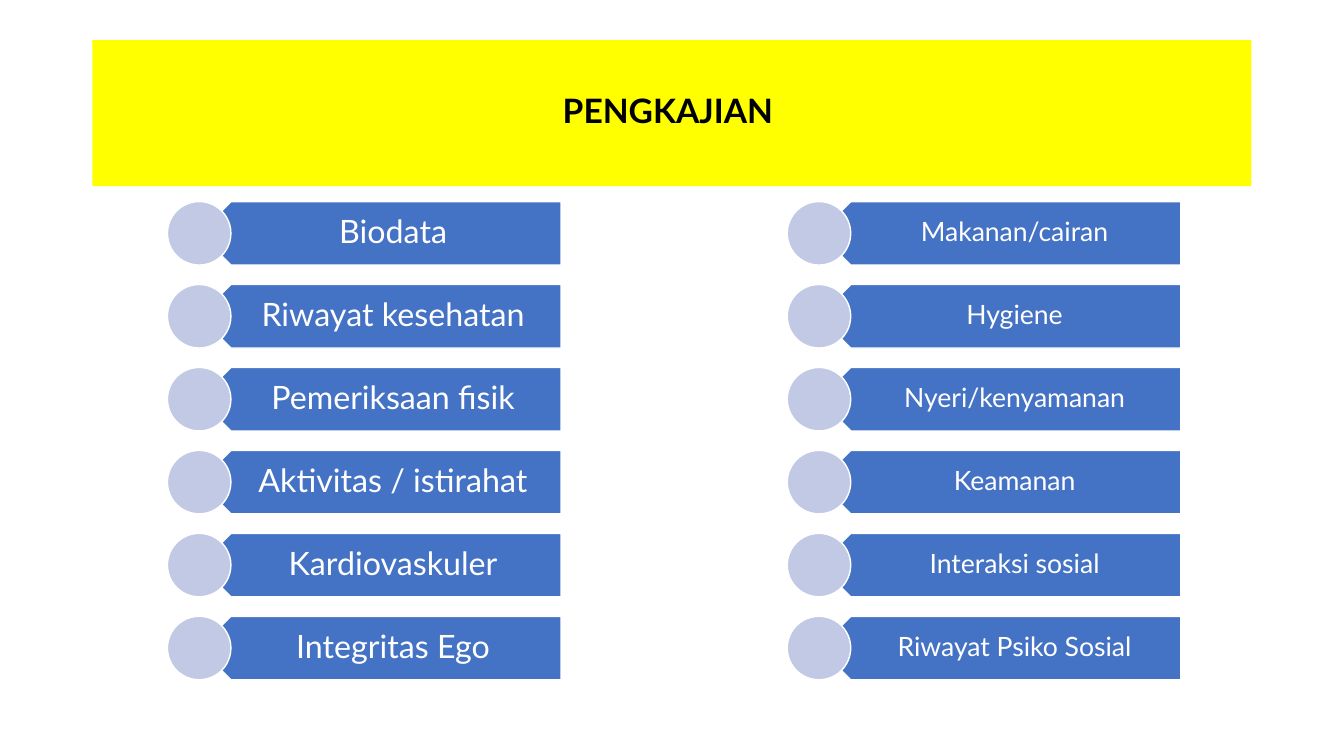
from dataclasses import dataclass

from pptx import Presentation
from pptx.dml.color import RGBColor
from pptx.enum.shapes import MSO_SHAPE
from pptx.enum.text import MSO_ANCHOR, PP_ALIGN
from pptx.util import Cm, Pt

RECTANGLE = MSO_SHAPE.RECTANGLE
PENTAGON = MSO_SHAPE.PENTAGON
OVAL = MSO_SHAPE.OVAL
MIDDLE = MSO_ANCHOR.MIDDLE
CENTER = PP_ALIGN.CENTER


@dataclass(frozen=True)
class Theme:
    font: str = "Lato"
    banner: RGBColor = RGBColor(0xFF, 0xFF, 0x00)
    bar: RGBColor = RGBColor(0x44, 0x72, 0xC4)
    circle: RGBColor = RGBColor(0xC1, 0xC9, 0xE4)
    white: RGBColor = RGBColor(0xFF, 0xFF, 0xFF)
    black: RGBColor = RGBColor(0x00, 0x00, 0x00)
    title_size: int = 24
    left_size: int = 23
    right_size: int = 19


theme = Theme()


def add_filled(shapes, kind, left, top, width, height, color, outline=None):
    shape = shapes.add_shape(kind, Cm(left), Cm(top), Cm(width), Cm(height))
    shape.shadow.inherit = False
    shape.fill.solid()
    shape.fill.fore_color.rgb = color
    if outline is None:
        shape.line.fill.background()
    else:
        shape.line.color.rgb = outline
        shape.line.width = Pt(1)
    return shape


def write_centered(shape, text, size, color, bold=False):
    frame = shape.text_frame
    frame.word_wrap = True
    frame.vertical_anchor = MIDDLE
    paragraph = frame.paragraphs[0]
    paragraph.text = text
    paragraph.alignment = CENTER
    paragraph.line_spacing = 0.9
    paragraph.font.name = theme.font
    paragraph.font.size = Pt(size)
    paragraph.font.bold = bold
    paragraph.font.color.rgb = color


presentation = Presentation()
presentation.slide_width = Cm(33.87)
presentation.slide_height = Cm(19.05)
slide = presentation.slides.add_slide(presentation.slide_layouts[6])

# Title banner
banner = add_filled(slide.shapes, RECTANGLE, 2.33, 1.01, 29.21, 3.68, theme.banner)
write_centered(banner, "PENGKAJIAN ", theme.title_size, theme.black, bold=True)

# Two columns: left edge, type size, right inset, vertical inset, labels
columns = [
    (4.22, theme.left_size, 0.46, 0.25,
     ["Biodata", "Riwayat kesehatan", "Pemeriksaan fisik",
      "Aktivitas / istirahat", "Kardiovaskuler", "Integritas Ego"]),
    (19.84, theme.right_size, 0.38, 0.2,
     ["Makanan/cairan", "Hygiene", "Nyeri/kenyamanan",
      "Keamanan", "Interaksi sosial", "Riwayat Psiko Sosial"]),
]
first_top, row_pitch, row_height = 5.08, 2.09, 1.6
bar_width, label_width = 9.12, 8.71

for left, size, right_inset, vertical_inset, labels in columns:
    shapes = slide.shapes.add_group_shape().shapes
    bar_left = left + row_height / 2
    label_left = bar_left + bar_width - label_width
    for row, label in enumerate(labels):
        top = first_top + row * row_pitch

        # Bar pointing left
        bar = add_filled(shapes, PENTAGON, bar_left, top, bar_width, row_height,
                         theme.bar, theme.white)
        bar.rotation = 180

        # Upright label over the bar
        box = shapes.add_textbox(Cm(label_left), Cm(top), Cm(label_width), Cm(row_height))
        frame = box.text_frame
        frame.margin_left, frame.margin_right = Cm(0.71), Cm(right_inset)
        frame.margin_top = frame.margin_bottom = Cm(vertical_inset)
        write_centered(box, label, size, theme.white)

        # Circle over the tip
        add_filled(shapes, OVAL, left, top, row_height, row_height,
                   theme.circle, theme.white)

presentation.save("out.pptx")
